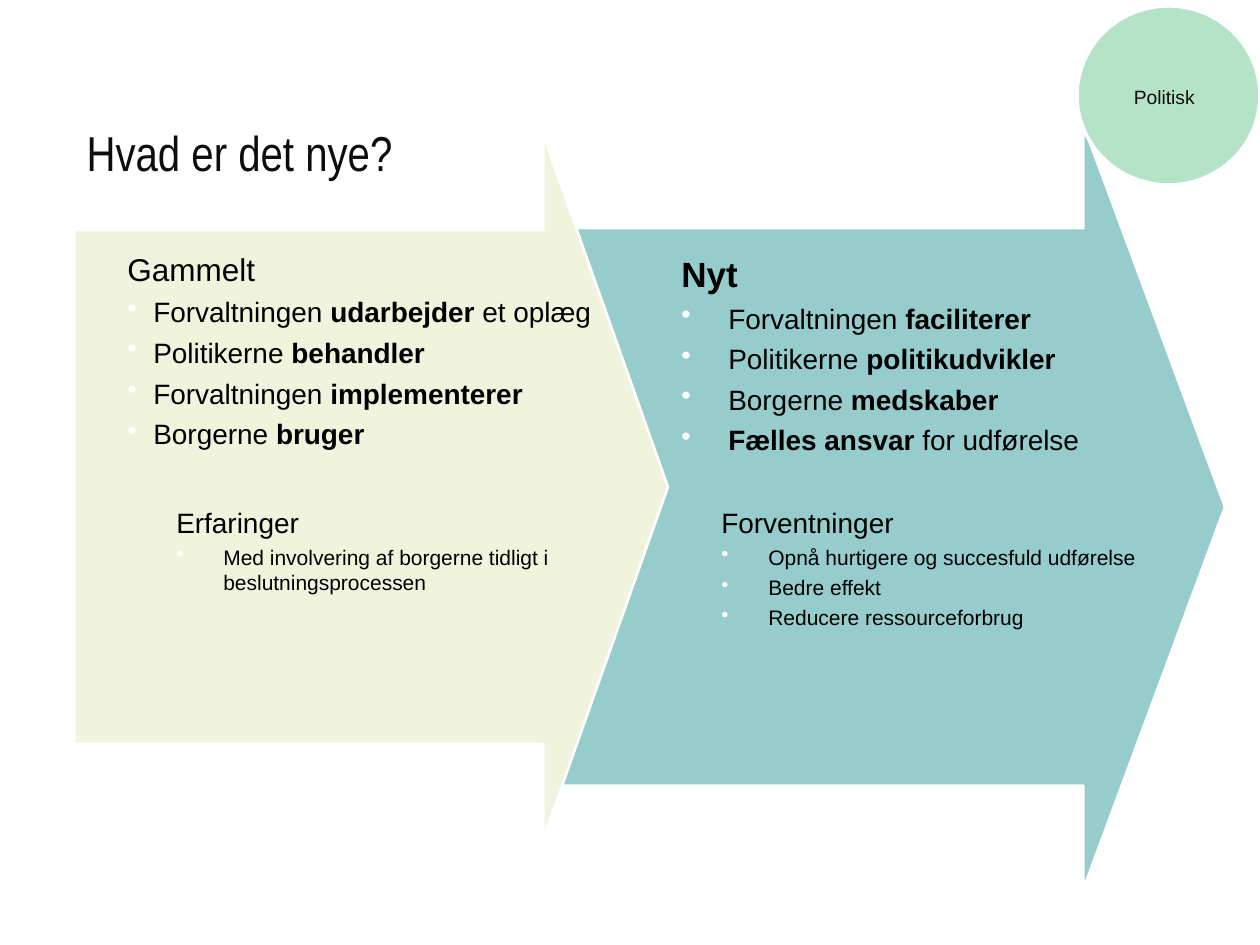
from lxml import etree
from pptx import Presentation
from pptx import util as u
from pptx.dml.color import RGBColor
from pptx.enum import shapes, text
from pptx.oxml import ns

SCALE = 914400 / 126
BLACK = RGBColor(0, 0, 0)
WHITE = RGBColor(255, 255, 255)
INK = RGBColor(0x0D, 0x0D, 0x0D)
TEAL = RGBColor(0x97, 0xCC, 0xCD)
CREAM = RGBColor(0xF1, 0xF4, 0xDD)
GREEN = RGBColor(0xB5, 0xE3, 0xC7)


def px(length):
    return u.Emu(round(length * SCALE))


def place(*lengths):
    return [px(length) for length in lengths]


def write(para, words, *, size, font="Arial", color=BLACK, align=text.PP_ALIGN.LEFT):
    para.alignment = align
    for index, part in enumerate(words.split("*")):
        if part:
            span = para.add_run()
            span.text = part
            span.font.name = font
            span.font.size = u.Pt(size)
            span.font.color.rgb = color
            span.font.bold = index % 2 == 1


def add_filled(page, kind, area, color, line_width):
    shape = page.shapes.add_shape(kind, *place(*area))
    shape.shadow.inherit = False
    shape.fill.solid()
    shape.fill.fore_color.rgb = color
    shape.line.color.rgb = WHITE
    shape.line.width = u.Pt(line_width)
    return shape


def add_arrow(page, area, color):
    arrow = add_filled(page, shapes.MSO_SHAPE.RIGHT_ARROW, area, color, 1.5)
    arrow.adjustments[0] = 0.73
    arrow.adjustments[1] = 0.21


def add_bullet(para):
    props = para._p.get_or_add_pPr()
    tint = etree.SubElement(props, ns.qn("a:buClr"))
    etree.SubElement(tint, ns.qn("a:srgbClr"), val=str(WHITE))
    etree.SubElement(props, ns.qn("a:buChar"), char="•")


def add_list(page, area, heading, items, *, heading_size, size, indent):
    frame = page.shapes.add_textbox(*place(*area)).text_frame
    frame.word_wrap = True
    write(frame.paragraphs[0], heading, size=heading_size)
    for item in items:
        para = frame.add_paragraph()
        props = para._p.get_or_add_pPr()
        props.set("marL", str(px(indent)))
        props.set("indent", str(-px(indent)))
        add_bullet(para)
        para.space_before = u.Pt(size / 4)
        write(para, item, size=size)


def add_title(page, area, words):
    title = page.shapes.title
    title.left, title.top, title.width, title.height = place(*area)
    frame = title.text_frame
    frame.auto_size = text.MSO_AUTO_SIZE.NONE
    frame.vertical_anchor = text.MSO_ANCHOR.TOP
    write(frame.paragraphs[0], words, size=28, font="Arial Narrow", color=INK)


def add_badge(page, words):
    add_filled(page, shapes.MSO_SHAPE.OVAL, (1077, 6, 183, 179), GREEN, 2)
    frame = page.shapes.add_textbox(*place(1102, 35, 130, 126)).text_frame
    frame.word_wrap = True
    frame.vertical_anchor = text.MSO_ANCHOR.MIDDLE
    frame.margin_left = frame.margin_right = px(2)
    frame.margin_top = frame.margin_bottom = px(2)
    para = frame.paragraphs[0]
    para.line_spacing = 0.9
    write(para, words, size=11, color=INK, align=text.PP_ALIGN.CENTER)


def main():
    deck = Presentation()
    deck.slide_width, deck.slide_height = place(1260, 945)
    page = deck.slides.add_slide(deck.slide_layouts[5])
    add_title(page, (74, 116, 1071, 194), "Hvad er det nye?")
    add_arrow(page, (551, 125, 674, 764), TEAL)
    add_arrow(page, (74, 135, 594, 704), CREAM)
    add_list(page, (115, 244, 595, 410), "Gammelt", [
        "Forvaltningen *udarbejder *et oplæg",
        "Politikerne *behandler*",
        "Forvaltningen *implementerer*",
        "Borgerne *bruger*",
    ], heading_size=18, size=16, indent=26)
    add_list(page, (164, 499, 566, 410), "Erfaringer", [
        "Med involvering af borgerne tidligt i beslutningsprocessen",
    ], heading_size=16, size=12, indent=47)
    add_list(page, (709, 499, 456, 410), "Forventninger", [
        "Opnå hurtigere og succesfuld udførelse",
        "Bedre effekt",
        "Reducere ressourceforbrug",
    ], heading_size=16, size=12, indent=47)
    add_list(page, (669, 246, 566, 832), "*Nyt*", [
        "Forvaltningen *faciliterer*",
        "Politikerne *politikudvikler*",
        "Borgerne *medskaber*",
        "*Fælles ansvar *for udførelse",
    ], heading_size=20, size=16, indent=47)
    add_badge(page, "Politisk ")
    deck.save("out.pptx")


if __name__ == "__main__":
    main()
